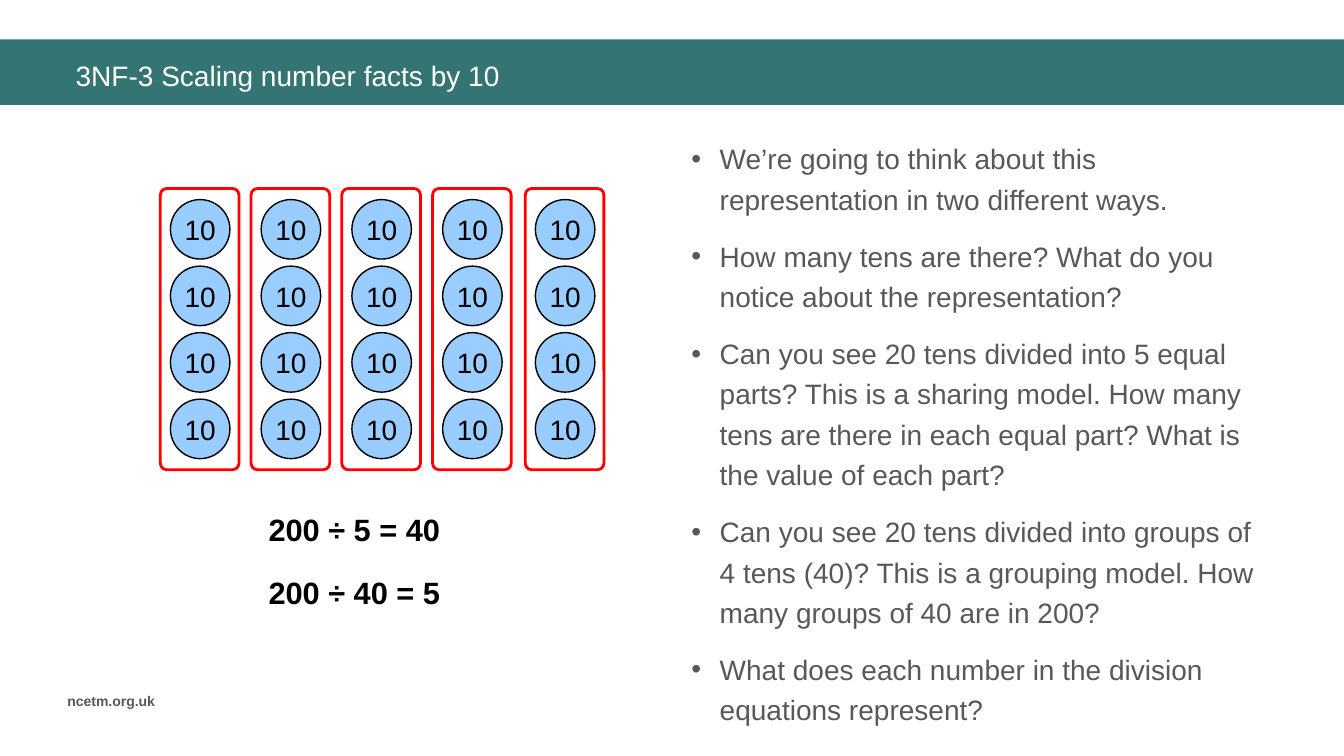
from lxml import etree
from pptx import Presentation
from pptx.dml.color import RGBColor
from pptx.enum.shapes import MSO_SHAPE
from pptx.enum.text import MSO_ANCHOR, PP_ALIGN
from pptx.oxml.ns import qn
from pptx.util import Inches, Pt

RECTANGLE = MSO_SHAPE.RECTANGLE
ROUNDED = MSO_SHAPE.ROUNDED_RECTANGLE
OVAL = MSO_SHAPE.OVAL
MIDDLE, TOP = MSO_ANCHOR.MIDDLE, MSO_ANCHOR.TOP
LEFT, CENTER = PP_ALIGN.LEFT, PP_ALIGN.CENTER

TEAL, GREY, BLACK, WHITE = "347574", "585858", "000000", "FFFFFF"
RED, BLUE = "FF0000", "99CCFF"

PART_LEFTS = [1.59, 2.49, 3.39, 4.29, 5.21]
TENS_PER_PART = 4
EQUATIONS = ["200 ÷ 5 = 40", "200 ÷ 40 = 5"]
QUESTIONS = [
    "We’re going to think about this representation in two different ways.",
    "How many tens are there? What do you notice about the representation?",
    "Can you see 20 tens divided into 5 equal parts? This is a sharing model. "
    "How many tens are there in each equal part? What is the value of each part?",
    "Can you see 20 tens divided into groups of 4 tens (40)? This is a grouping "
    "model. How many groups of 40 are in 200?",
    "What does each number in the division equations represent?",
]


def rgb(value):
    return RGBColor.from_string(value)


def style_font(paragraph, size, color, bold=False):
    for run in paragraph.runs:
        run.font.name = "Arial"
        run.font.size = Pt(size)
        run.font.bold = bold
        run.font.color.rgb = rgb(color)


def add_block(slide, kind, left, top, width, height, fill, line=None, line_width=1):
    block = slide.shapes.add_shape(
        kind, Inches(left), Inches(top), Inches(width), Inches(height))
    block.shadow.inherit = False
    block.fill.solid()
    block.fill.fore_color.rgb = rgb(fill)
    if line:
        block.line.color.rgb = rgb(line)
        block.line.width = Pt(line_width)
    else:
        block.line.fill.background()
    return block


def add_label(slide, text, left, top, width, height, size, color, align=LEFT):
    label = slide.shapes.add_textbox(
        Inches(left), Inches(top), Inches(width), Inches(height))
    label.text_frame.text = text
    paragraph = label.text_frame.paragraphs[0]
    paragraph.alignment = align
    style_font(paragraph, size, color, bold=True)


def add_title(slide, text):
    title = slide.shapes.title
    title.left, title.top = Inches(0.65), Inches(0.51)
    title.width, title.height = Inches(12.32), Inches(0.47)
    frame = title.text_frame
    frame.text = text
    frame.vertical_anchor = MIDDLE
    frame.paragraphs[0].alignment = LEFT
    style_font(frame.paragraphs[0], 20, WHITE)
    banner = add_block(slide, RECTANGLE, 0, 0.39, 13.33, 0.65, TEAL)
    title.element.addprevious(banner.element)


def add_ten(slide, left, top):
    counter = add_block(slide, OVAL, left, top, 0.59, 0.59, BLUE, BLACK)
    frame = counter.text_frame
    frame.margin_left = frame.margin_right = 0
    frame.margin_top = frame.margin_bottom = 0
    frame.word_wrap = False
    frame.vertical_anchor = MIDDLE
    frame.text = "10"
    frame.paragraphs[0].alignment = CENTER
    style_font(frame.paragraphs[0], 20, BLACK)


def add_part(slide, left):
    outline = add_block(slide, ROUNDED, left, 1.87, 0.78, 2.79, WHITE, RED, 2)
    outline.adjustments[0] = 0.082
    for row in range(TENS_PER_PART):
        add_ten(slide, left + 0.1, 1.98 + 0.66 * row)


def add_bullet(paragraph):
    properties = paragraph._p.get_or_add_pPr()
    properties.set("marL", str(Inches(0.28)))
    properties.set("indent", str(-Inches(0.28)))
    color = etree.SubElement(properties, qn("a:buClr"))
    etree.SubElement(color, qn("a:srgbClr")).set("val", GREY)
    etree.SubElement(properties, qn("a:buFont")).set("typeface", "Arial")
    etree.SubElement(properties, qn("a:buChar")).set("char", "•")


def add_questions(slide, questions):
    panel = slide.shapes.add_textbox(
        Inches(6.76), Inches(1.29), Inches(5.9), Inches(4.49))
    frame = panel.text_frame
    frame.word_wrap = True
    frame.vertical_anchor = TOP
    frame.text = "\n".join(questions)
    for index, paragraph in enumerate(frame.paragraphs):
        add_bullet(paragraph)
        paragraph.line_spacing = 1.2
        paragraph.space_before = Pt(6 if index else 0)
        paragraph.space_after = Pt(6)
        style_font(paragraph, 20, GREY)


def main():
    deck = Presentation()
    deck.slide_width, deck.slide_height = Inches(13.33), Inches(7.5)
    slide = deck.slides.add_slide(deck.slide_layouts[5])
    add_title(slide, "3NF-3 Scaling number facts by 10")
    add_label(slide, "ncetm.org.uk", 0.57, 6.82, 1.21, 0.27, 10, GREY)
    for row, equation in enumerate(EQUATIONS):
        add_label(slide, equation, 2.55, 5.02 + 0.62 * row, 1.93, 0.47,
                  22, BLACK, CENTER)
    for left in PART_LEFTS:
        add_part(slide, left)
    add_questions(slide, QUESTIONS)
    deck.save("out.pptx")


if __name__ == "__main__":
    main()
